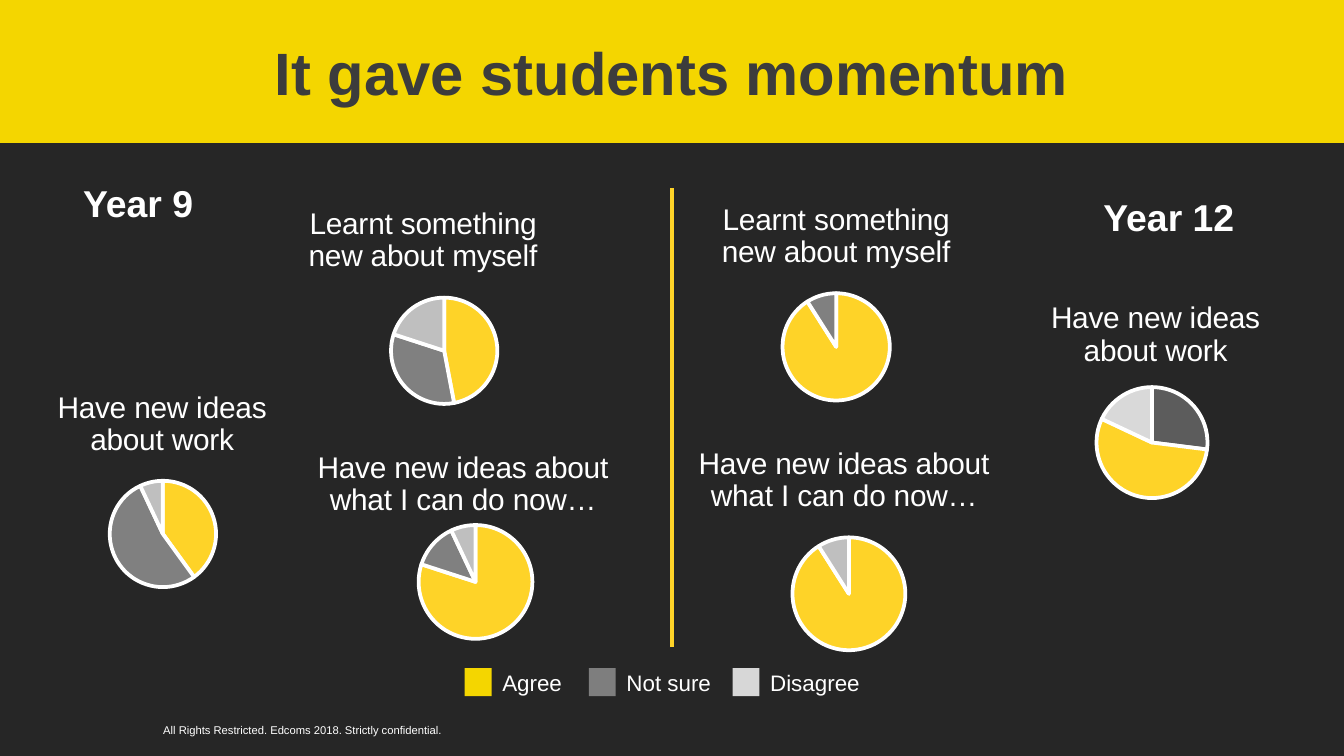
from collections import namedtuple
from dataclasses import dataclass

from lxml.etree import SubElement
from pptx import Presentation
from pptx.chart.data import CategoryChartData
from pptx.dml.color import RGBColor as RGB
from pptx.enum.chart import XL_CHART_TYPE as ChartType
from pptx.enum.shapes import MSO_CONNECTOR as Connector, MSO_SHAPE as Shape
from pptx.enum.text import MSO_ANCHOR as Anchor, PP_ALIGN as Align
from pptx.oxml import parse_xml
from pptx.oxml.ns import nsdecls, qn
from pptx.util import Pt

Box = namedtuple("Box", "left top width height")


@dataclass(frozen=True)
class Theme:
    font: str = "Arial"
    background: RGB = RGB(0x26, 0x26, 0x26)
    banner: RGB = RGB(0xF4, 0xD6, 0x00)
    heading: RGB = RGB(0x3C, 0x3C, 0x3C)
    text: RGB = RGB(0xFF, 0xFF, 0xFF)
    accent: RGB = RGB(0xFE, 0xD3, 0x28)
    grey: RGB = RGB(0x80, 0x80, 0x80)
    light: RGB = RGB(0xBF, 0xBF, 0xBF)
    dark: RGB = RGB(0x5C, 0x5C, 0x5C)
    pale: RGB = RGB(0xD9, 0xD9, 0xD9)
    unused: RGB = RGB(0x62, 0xA5, 0x08)
    key_grey: RGB = RGB(0x7E, 0x7E, 0x7E)
    key_pale: RGB = RGB(0xD7, 0xD7, 0xD7)
    title_size: int = 32
    year_size: int = 20
    chart_size: int = 16
    key_size: int = 12
    base_size: int = 10
    footer_size: int = 6


THEME = Theme()


def set_font(font, size, color=THEME.text, bold=False):
    font.name, font.size, font.bold = THEME.font, Pt(size), bold
    font.color.rgb = color


def add_label(slide, box, text, size, color=THEME.text, bold=False,
              align=Align.LEFT, anchor=Anchor.TOP, inset=True):
    frame = slide.shapes.add_textbox(*map(Pt, box)).text_frame
    frame.word_wrap = False
    frame.vertical_anchor = anchor
    if not inset:
        frame.margin_left = frame.margin_right = Pt(0)
        frame.margin_top = frame.margin_bottom = Pt(0)
    paragraph = frame.paragraphs[0]
    paragraph.text, paragraph.alignment = text, align
    set_font(paragraph.font, size, color, bold)


def add_block(slide, box, color):
    block = slide.shapes.add_shape(Shape.RECTANGLE, *map(Pt, box))
    block.shadow.inherit = False
    block.fill.solid()
    block.fill.fore_color.rgb = color
    block.line.fill.background()


def manual_layout(x, y, w=None, h=None):
    """Layout element with positions as fractions of the chart area."""
    inner = '<c:layoutTarget val="inner"/>' if w else ""
    sizes = f'<c:w val="{w:.4f}"/><c:h val="{h:.4f}"/>' if w else ""
    return parse_xml(
        f'<c:layout {nsdecls("c")}><c:manualLayout>{inner}'
        '<c:xMode val="edge"/><c:yMode val="edge"/>'
        f'<c:x val="{x:.4f}"/><c:y val="{y:.4f}"/>{sizes}'
        '</c:manualLayout></c:layout>')


def add_banner(slide, box, title):
    add_block(slide, box, THEME.banner)
    add_label(slide, Box(box.left + 138, box.top + 24.5, 444, 28), title,
              THEME.title_size, THEME.heading, True,
              Align.CENTER, Anchor.MIDDLE, inset=False)


def add_pie(slide, box, lines, title_at, pie_at, diameter, values, colors):
    """Pie chart; title corner and pie centre are offsets within the box."""
    data = CategoryChartData()
    data.categories = ["1", "2", "3"]
    data.add_series("Series 1", values)
    chart = slide.shapes.add_chart(ChartType.PIE, *map(Pt, box), data).chart
    chart.has_legend = False
    set_font(chart.font, THEME.base_size, THEME.background)

    # Heading, one paragraph per line
    frame = chart.chart_title.text_frame
    frame.text = "\n".join(lines)
    for paragraph in frame.paragraphs:
        paragraph.alignment = Align.CENTER
        set_font(paragraph.font, THEME.chart_size)
    chart.chart_title.include_in_layout = False
    title = chart.chart_title._element
    for old in title.findall(qn("c:layout")):
        title.remove(old)
    title.find(qn("c:tx")).addnext(
        manual_layout(title_at[0] / box.width, title_at[1] / box.height))

    # Slices
    plot = chart.plots[0]
    plot.vary_by_categories = True
    for index, color in enumerate(colors):
        slice_format = plot.series[0].points[index].format
        slice_format.fill.solid()
        slice_format.fill.fore_color.rgb = color
        slice_format.line.color.rgb = THEME.text
        slice_format.line.width = Pt(2)
    area = chart._chartSpace.chart.plotArea
    for old in area.findall(qn("c:layout")):
        area.remove(old)
    area.insert(0, manual_layout((pie_at[0] - diameter / 2) / box.width,
                                 (pie_at[1] - diameter / 2) / box.height,
                                 diameter / box.width, diameter / box.height))


def add_divider(slide, x, top, bottom):
    divider = slide.shapes.add_connector(
        Connector.STRAIGHT, Pt(x), Pt(top), Pt(x), Pt(bottom))
    divider.line.color.rgb = THEME.accent
    divider.line.width = Pt(2.25)
    SubElement(divider._element.spPr, qn("a:effectLst"))


def add_key(slide, box):
    entries = [(0, 47, "Agree", THEME.banner),
               (66.5, 62, "Not sure", THEME.key_grey),
               (143.5, 68, "Disagree", THEME.key_pale)]
    for offset, width, answer, color in entries:
        left = box.left + offset
        add_block(slide, Box(left, box.top + 3, 14.4, 15), color)
        add_label(slide, Box(left + 13, box.top, width, box.height), answer,
                  THEME.key_size)


def build():
    deck = Presentation()
    deck.slide_width, deck.slide_height = Pt(720), Pt(405)
    slide = deck.slides.add_slide(deck.slide_layouts[6])
    slide.background.fill.solid()
    slide.background.fill.fore_color.rgb = THEME.background

    add_label(slide, Box(-198, 381.6, 720, 19),
              "All Rights Restricted. Edcoms 2018. Strictly confidential.",
              THEME.footer_size, align=Align.CENTER, anchor=Anchor.MIDDLE,
              inset=False)
    add_banner(slide, Box(0, 0, 726, 76.5), "It gave students momentum")
    add_label(slide, Box(37.4, 93, 85, 31.5), "Year 9", THEME.year_size, bold=True)
    add_label(slide, Box(584, 100.5, 85, 31.5), "Year 12", THEME.year_size, bold=True)

    # Pies, Year 9 first and then Year 12
    myself = ["Learnt something", "new about myself"]
    work = ["Have new ideas", "about work"]
    now = ["Have new ideas about", "what I can do now…"]
    greys = [THEME.accent, THEME.grey, THEME.light]
    pies = [
        (Box(144, 99.4, 187.2, 127.4), myself, (19.2, 8.3), (94, 88.6), 57,
         (47, 33, 20), greys),
        (Box(10, 200, 154, 124.6), work, (18.7, 6.3), (77.3, 86.1), 57,
         (40, 53, 7), greys),
        (Box(130.3, 238.3, 275, 116.6), now, (37.7, 0), (124.5, 73.5), 61,
         (80, 13, 7), greys),
        (Box(332.6, 99.4, 231, 125.3), myself, (51.9, 6.3), (115.4, 86.5), 57.5,
         (91, 9, 0), [THEME.accent, THEME.grey, THEME.unused]),
        (Box(351.4, 229.7, 206.6, 128.9), now, (20.7, 6.6), (103.4, 88.5), 60.5,
         (91, 9, 0), [THEME.accent, THEME.light, THEME.unused]),
        (Box(534.2, 152, 170.6, 127.4), work, (26.7, 6.3), (83, 85.2), 59.5,
         (27, 55, 18), [THEME.dark, THEME.accent, THEME.pale]),
    ]
    for pie in pies:
        add_pie(slide, *pie)

    add_divider(slide, 360, 100.8, 346.4)
    add_key(slide, Box(249, 355, 225, 21.6))
    deck.save("out.pptx")


if __name__ == "__main__":
    build()
